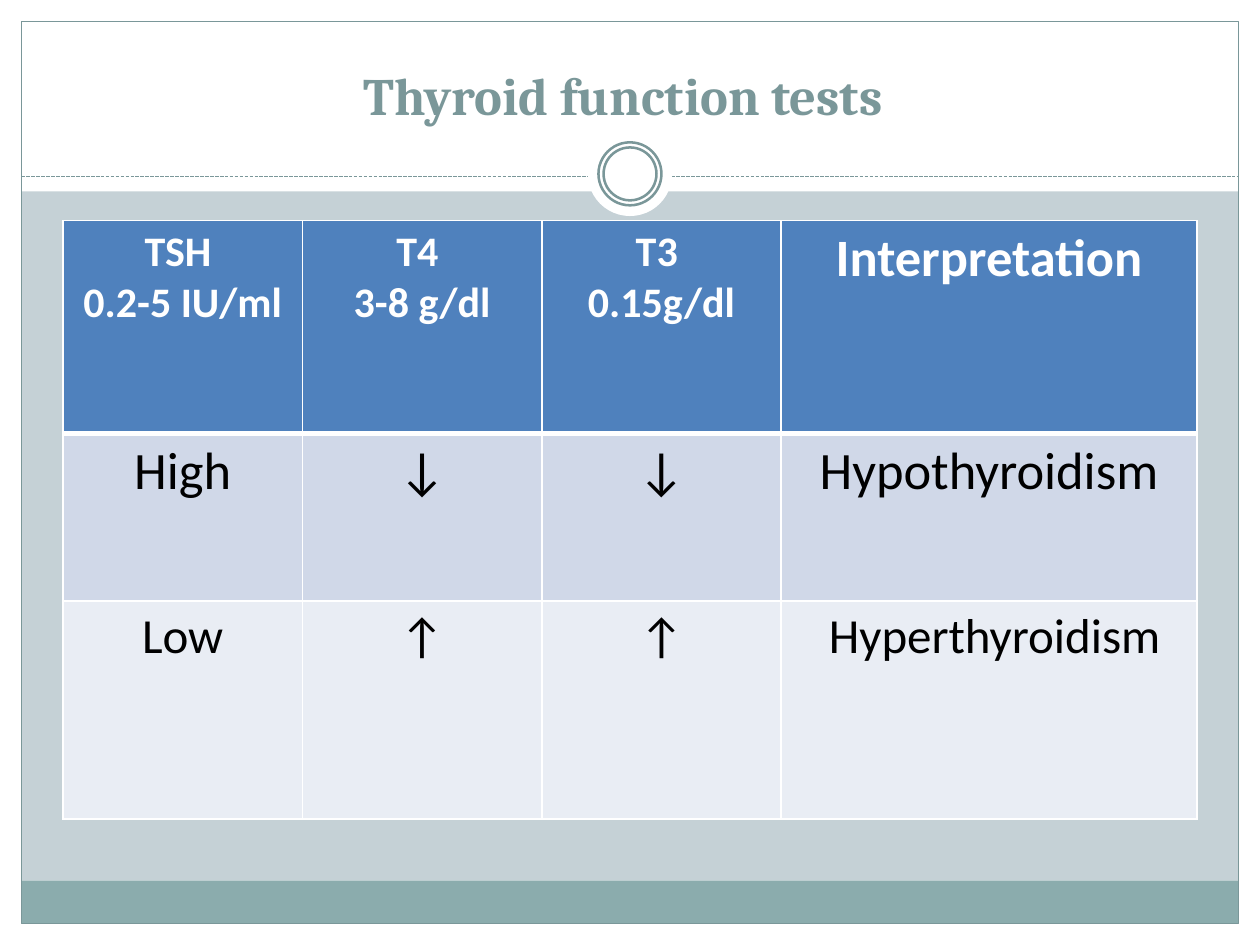
from typing import NamedTuple

from lxml.etree import SubElement
from pptx import Presentation
from pptx.dml.color import RGBColor
from pptx.enum.dml import MSO_LINE
from pptx.enum.shapes import MSO_CONNECTOR, MSO_SHAPE
from pptx.enum.text import PP_ALIGN
from pptx.oxml.ns import qn
from pptx.util import Inches, Pt

WHITE = RGBColor(0xFF, 0xFF, 0xFF)
BLACK = RGBColor(0, 0, 0)
TEAL = RGBColor(0x7A, 0x97, 0x99)
FOOTER = RGBColor(0x8B, 0xAC, 0xAD)
PANEL = RGBColor(0xC5, 0xD1, 0xD6)
HEADER = RGBColor(0x4F, 0x81, 0xBD)
BAND_DARK = RGBColor(0xD0, 0xD8, 0xE8)
BAND_LIGHT = RGBColor(0xE9, 0xED, 0xF4)

MARGIN = 0.17
RING_X, RING_Y = 5, 1.38


class Cell(NamedTuple):
    text: str
    size: int
    spacing: float = 0


class Row(NamedTuple):
    height: float
    fill: RGBColor
    color: RGBColor
    bold: bool
    cells: list[Cell]


COLUMN_WIDTHS = [1.9, 1.9, 1.9, 3.3]
ROWS = [
    Row(1.69, HEADER, WHITE, True, [
        Cell("TSH \n0.2-5 IU/ml", 24), Cell("T4 \n3-8 g/dl", 24),
        Cell("T3 \n0.15g/dl", 24), Cell("Interpretation", 30)]),
    Row(1.33, BAND_DARK, BLACK, False, [
        Cell("High", 30), Cell("↓", 30, 10.9),
        Cell("↓", 30, 10.9), Cell("Hypothyroidism", 30)]),
    Row(1.73, BAND_LIGHT, BLACK, False, [
        Cell("Low", 28), Cell("↑", 28, 5),
        Cell("↑", 28, 5), Cell(" Hyperthyroidism", 28)]),
]


def add_shape(s, kind, x: float, y: float, w: float, h: float,
              fill: RGBColor | None = None, line: float = 0):
    """Add a preset shape with an optional fill and teal outline."""
    sp = s.shapes.add_shape(kind, Inches(x), Inches(y), Inches(w), Inches(h))
    sp.shadow.inherit = False
    if fill is None:
        sp.fill.background()
    else:
        sp.fill.solid()
        sp.fill.fore_color.rgb = fill
    if line:
        sp.line.color.rgb = TEAL
        sp.line.width = Pt(line)
    else:
        sp.line.fill.background()


def add_circle(s, diameter: float, fill: RGBColor | None = None, line: float = 0):
    """Add a circle centred on the ring."""
    add_shape(s, MSO_SHAPE.OVAL, RING_X - diameter / 2, RING_Y - diameter / 2,
              diameter, diameter, fill, line)


def set_border(cell, side: str, width: float):
    """Add one white border to a table cell."""
    ln = SubElement(cell._tc.get_or_add_tcPr(), qn(f"a:ln{side}"), w=str(Pt(width)))
    SubElement(SubElement(ln, qn("a:solidFill")), qn("a:srgbClr"), val=str(WHITE))


def fill_cell(cell, content: Cell, row: Row, top: float, bottom: float):
    """Write and style one table cell."""
    for side, width in zip("LRTB", (1, 1, top, bottom)):
        set_border(cell, side, width)
    cell.fill.solid()
    cell.fill.fore_color.rgb = row.fill
    cell.text_frame.text = content.text
    for p in cell.text_frame.paragraphs:
        p.alignment = PP_ALIGN.CENTER
        p.font.name = "Calibri"
        p.font.size = Pt(content.size)
        p.font.bold = row.bold
        p.font.color.rgb = row.color
        if content.spacing:
            for r in p.runs:
                r._r.get_or_add_rPr().set("spc", str(round(content.spacing * 100)))


def add_table(s):
    """Add the table of test results."""
    heights = [row.height for row in ROWS]
    table = s.shapes.add_table(
        len(ROWS), len(COLUMN_WIDTHS), Inches(0.5), Inches(1.75),
        Inches(sum(COLUMN_WIDTHS)), Inches(sum(heights))).table
    for column, width in zip(table.columns, COLUMN_WIDTHS):
        column.width = Inches(width)
    for i, row in enumerate(ROWS):
        table.rows[i].height = Inches(row.height)
        top, bottom = (3 if i == 1 else 1), (3 if i == 0 else 1)
        for j, content in enumerate(row.cells):
            fill_cell(table.cell(i, j), content, row, top, bottom)


def main():
    prs = Presentation()
    prs.slide_width, prs.slide_height = Inches(10), Inches(7.5)
    s = prs.slides.add_slide(prs.slide_layouts[6])
    inner = 10 - 2 * MARGIN

    # Panel, footer band and frame
    add_shape(s, MSO_SHAPE.RECTANGLE, MARGIN, 1.52, inner, 5.47, PANEL)
    add_shape(s, MSO_SHAPE.RECTANGLE, MARGIN, 6.99, inner, 0.34, FOOTER)
    add_shape(s, MSO_SHAPE.RECTANGLE, MARGIN, MARGIN, inner, 7.16, line=0.72)

    # Dashed divider
    divider = s.shapes.add_connector(
        MSO_CONNECTOR.STRAIGHT, Inches(MARGIN), Inches(1.4),
        Inches(10 - MARGIN), Inches(1.4))
    divider.line.color.rgb = TEAL
    divider.line.width = Pt(0.72)
    divider.line.dash_style = MSO_LINE.SQUARE_DOT
    SubElement(divider._element.spPr, qn("a:effectLst"))

    # Double ring
    add_circle(s, 0.67, WHITE)
    add_circle(s, 0.5, line=1.44)
    add_circle(s, 0.42, line=1.44)

    # Title
    tf = s.shapes.add_textbox(Inches(0.92), Inches(0.5), Inches(8.05), Inches(0.5)).text_frame
    tf.word_wrap = True
    tf.margin_left = tf.margin_top = tf.margin_right = tf.margin_bottom = 0
    p = tf.paragraphs[0]
    p.text = "Thyroid function tests"
    p.alignment = PP_ALIGN.CENTER
    p.font.name = "Cambria"
    p.font.size = Pt(30)
    p.font.bold = True
    p.font.color.rgb = TEAL

    add_table(s)
    prs.save("out.pptx")


if __name__ == "__main__":
    main()
